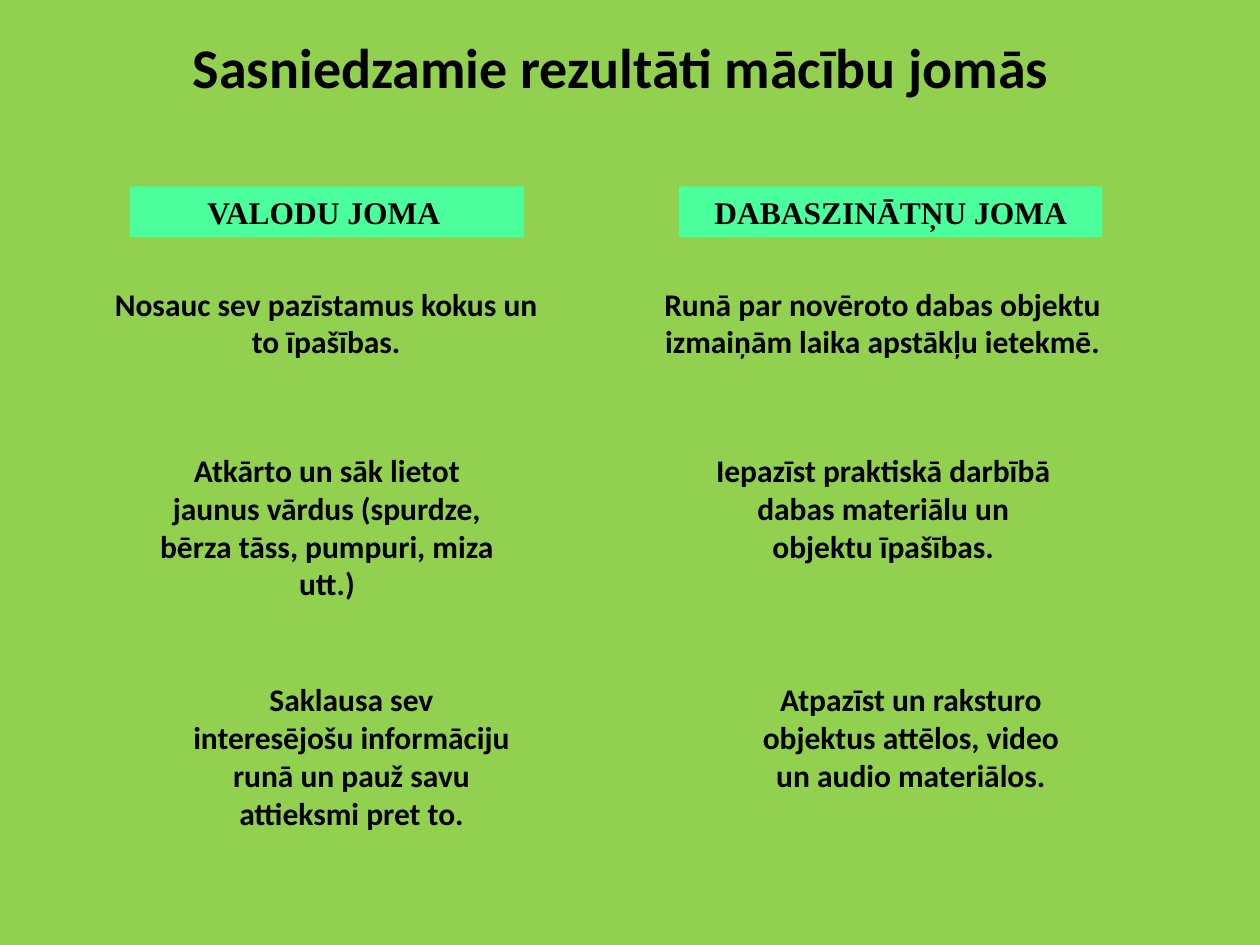
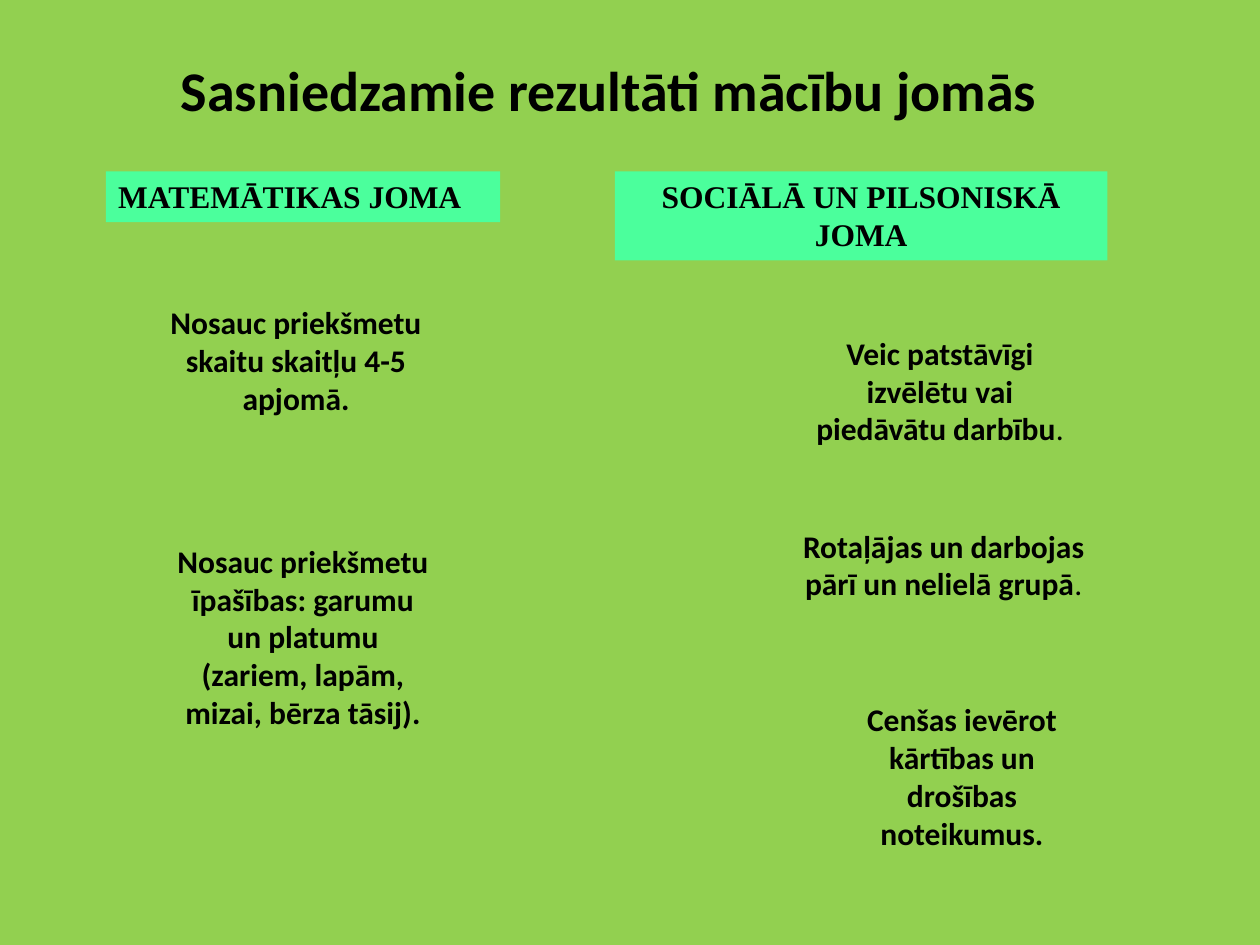
from dataclasses import dataclass
from typing import Any

from pptx import Presentation
from pptx.dml.color import RGBColor
from pptx.enum.shapes import MSO_SHAPE
from pptx.enum.text import MSO_ANCHOR, MSO_AUTO_SIZE, PP_ALIGN
from pptx.util import Inches, Pt

LEFT, CENTER = PP_ALIGN.LEFT, PP_ALIGN.CENTER
RECTANGLE = MSO_SHAPE.RECTANGLE
TITLE_ONLY = 5

# The grid has 100 columns and 75 rows.
SLIDE_WIDTH, SLIDE_HEIGHT = Inches(10), Inches(7.5)
COLUMN, ROW = SLIDE_WIDTH / 100, SLIDE_HEIGHT / 75
PADDING_ROWS, LINE_ROWS, TITLE_ROWS = 1, 3.04, 6.4

GRASS, MINT, INK = "92D050", "4BFF9C", "000000"
HEADLINE = "Sasniedzamie rezultāti mācību jomās"
FRAME_FORMAT = {
    "word_wrap": True,
    "vertical_anchor": MSO_ANCHOR.TOP,
    "auto_size": MSO_AUTO_SIZE.NONE,
    "margin_left": Inches(0.1),
    "margin_right": Inches(0.1),
    "margin_top": Inches(0.05),
    "margin_bottom": Inches(0.05),
}
TITLE_FONT = {"name": "Calibri", "size": Pt(32), "bold": True}
AREA_FONT = {"name": "Times New Roman", "size": Pt(18), "bold": True}
OUTCOME_FONT = {"name": "Calibri", "size": Pt(18), "bold": True}


@dataclass(frozen=True)
class Outcome:
    text: str
    left: float
    top: float
    width: float
    lines: int
    light_ending: str = ""


@dataclass(frozen=True)
class Area:
    name: str
    left: float
    top: float
    width: float
    outcomes: tuple[Outcome, ...]
    lines: int = 1
    align: PP_ALIGN = CENTER


@dataclass(frozen=True)
class AreaSlide:
    title_left: float
    title_top: float
    title_width: float
    areas: tuple[Area, ...]


HEADER_ROW, FIRST_ROW, SECOND_ROW, THIRD_ROW = 14.8, 22.1, 35.3, 53.5
LOWER_HEADER_ROW = 13.6

SLIDES = (
    AreaSlide(8.5, 2.1, 81.6, (
        Area("VALODU JOMA ", 10.3, HEADER_ROW, 31.3, (
            Outcome("Nosauc sev pazīstamus kokus un to īpašības.",
                    7.1, FIRST_ROW, 37.6, 2),
            Outcome("Atkārto un sāk lietot jaunus vārdus (spurdze, bērza tāss, "
                    "pumpuri, miza utt.)", 11.5, SECOND_ROW, 28.9, 4),
            Outcome("Saklausa sev interesējošu informāciju runā un pauž savu "
                    "attieksmi pret to.", 14.2, THIRD_ROW, 27.4, 4),
        )),
        Area("DABASZINĀTŅU JOMA", 53.9, HEADER_ROW, 33.6, (
            Outcome("Runā par novēroto dabas objektu izmaiņām laika apstākļu "
                    "ietekmē.", 51.5, FIRST_ROW, 37.1, 2),
            Outcome("Iepazīst praktiskā darbībā dabas materiālu un objektu "
                    "īpašības.", 55.7, SECOND_ROW, 28.8, 3),
            Outcome("Atpazīst un raksturo objektus attēlos, video un audio "
                    "materiālos.", 59.4, THIRD_ROW, 25.8, 3),
        )),
    )),
    AreaSlide(10.5, 3.9, 75.7, (
        Area("MATEMĀTIKAS JOMA", 8.4, LOWER_HEADER_ROW, 31.3, (
            Outcome("Nosauc priekšmetu skaitu skaitļu 4-5 apjomā.",
                    9.7, 23.6, 27.6, 3),
            Outcome("Nosauc priekšmetu īpašības: garumu un platumu (zariem, "
                    "lapām, mizai, bērza tāsij).", 12.7, 42.5, 22.7, 5),
        ), align=LEFT),
        Area("SOCIĀLĀ UN PILSONISKĀ JOMA", 48.8, LOWER_HEADER_ROW, 39.1, (
            Outcome("Veic patstāvīgi izvēlētu vai piedāvātu darbību",
                    63, 26, 23.2, 3, "."),
            Outcome("Rotaļājas un darbojas pārī un nelielā grupā",
                    61.9, 41.3, 26, 2, "."),
            Outcome("Cenšas ievērot kārtības un drošības noteikumus.",
                    65.5, 55.1, 21.7, 4),
        ), lines=2),
    )),
)


def color(hex_value: str) -> RGBColor:
    return RGBColor.from_string(hex_value)


def apply_format(target: Any, values: dict[str, Any]) -> None:
    for attribute, value in values.items():
        setattr(target, attribute, value)


def grid_box(left: float, top: float, width: float, height: float) -> tuple[int, ...]:
    """Turn grid columns and rows into slide lengths."""
    return (round(left * COLUMN), round(top * ROW),
            round(width * COLUMN), round(height * ROW))


def text_rows(lines: int) -> float:
    return PADDING_ROWS + lines * LINE_ROWS


def write(shape: Any, text: str, font: dict[str, Any],
          align: PP_ALIGN = CENTER, light_ending: str = "") -> None:
    """Fill a shape with one paragraph, its ending optionally not bold."""
    frame = shape.text_frame
    apply_format(frame, FRAME_FORMAT)
    paragraph = frame.paragraphs[0]
    paragraph.alignment = align
    for part, changes in ((text, {}), (light_ending, {"bold": False})):
        if part:
            run = paragraph.add_run()
            run.text = part
            apply_format(run.font, font | changes)
            run.font.color.rgb = color(INK)


def add_area(slide: Any, area: Area) -> None:
    band = slide.shapes.add_shape(
        RECTANGLE, *grid_box(area.left, area.top, area.width, text_rows(area.lines)))
    band.shadow.inherit = False
    band.fill.solid()
    band.fill.fore_color.rgb = color(MINT)
    band.line.fill.background()
    write(band, area.name, AREA_FONT, area.align)
    for outcome in area.outcomes:
        box = slide.shapes.add_textbox(*grid_box(
            outcome.left, outcome.top, outcome.width, text_rows(outcome.lines)))
        write(box, outcome.text, OUTCOME_FONT, light_ending=outcome.light_ending)


def add_area_slide(deck: Any, content: AreaSlide) -> None:
    slide = deck.slides.add_slide(deck.slide_layouts[TITLE_ONLY])
    title = slide.shapes.title
    place = grid_box(content.title_left, content.title_top,
                     content.title_width, TITLE_ROWS)
    apply_format(title, dict(zip(("left", "top", "width", "height"), place)))
    write(title, HEADLINE, TITLE_FONT)
    for area in content.areas:
        add_area(slide, area)


def main() -> None:
    deck = Presentation()
    deck.slide_width, deck.slide_height = SLIDE_WIDTH, SLIDE_HEIGHT
    background = deck.slide_master.background.fill
    background.solid()
    background.fore_color.rgb = color(GRASS)
    for content in SLIDES:
        add_area_slide(deck, content)
    deck.save("out.pptx")


if __name__ == "__main__":
    main()
